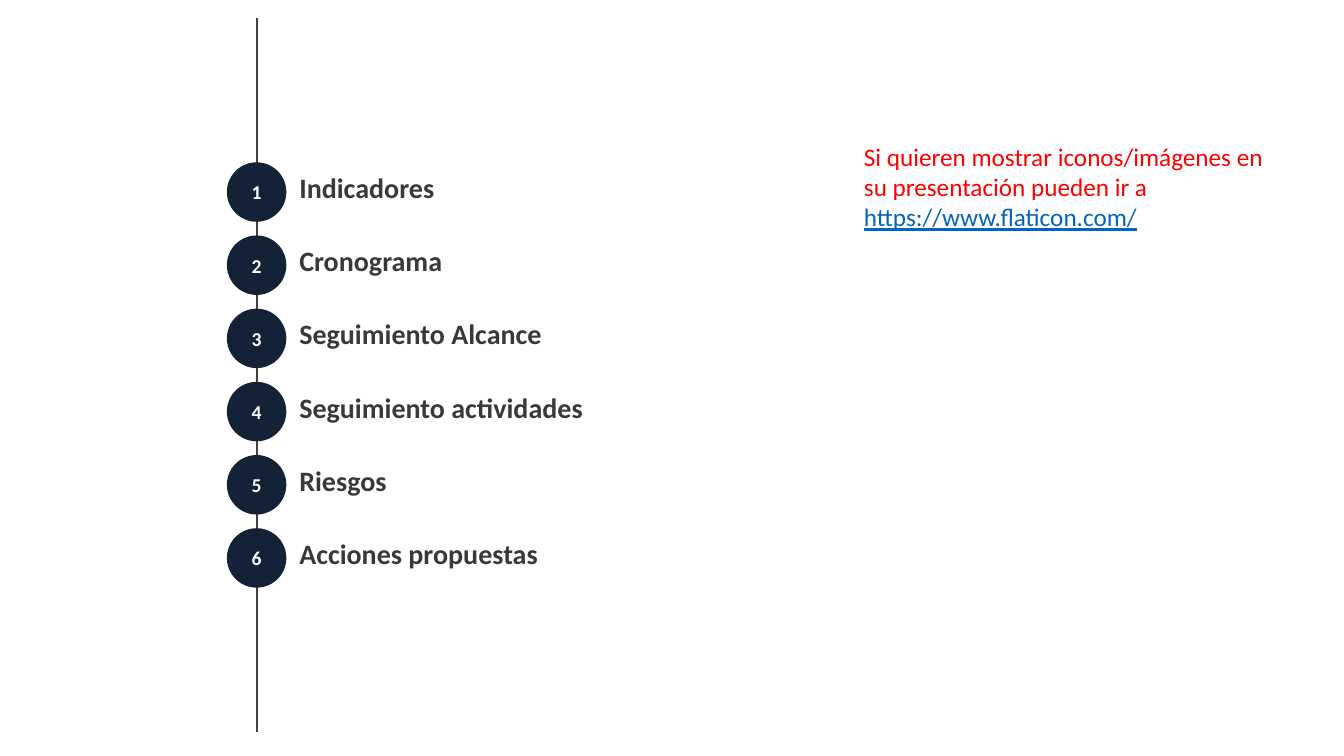
from pptx import Presentation
from pptx.dml.color import RGBColor
from pptx.enum.shapes import MSO_CONNECTOR, MSO_SHAPE
from pptx.enum.text import MSO_ANCHOR, PP_ALIGN
from pptx.oxml.ns import qn
from pptx.util import Inches, Pt
from lxml import etree

OVAL = MSO_SHAPE.OVAL
STRAIGHT = MSO_CONNECTOR.STRAIGHT
MIDDLE = MSO_ANCHOR.MIDDLE
CENTER = PP_ALIGN.CENTER

NAVY, GRAY, DARK, WHITE = "132236", "404040", "3B3838", "FFFFFF"
RED, BLUE = "FF0000", "0563C1"

TOPICS = ["Indicadores", "Cronograma", "Seguimiento Alcance",
          "Seguimiento actividades", "Riesgos", "Acciones propuestas"]
TOP, LAST = 1.61, 5.24
STEP = (LAST - TOP) / (len(TOPICS) - 1)
DISC = 0.59


def color(code):
    return RGBColor.from_string(code)


def style(run, size, code, bold=False):
    run.font.name = "Calibri"
    run.font.size = Pt(size)
    run.font.bold = bold
    run.font.color.rgb = color(code)


prs = Presentation()
prs.slide_width, prs.slide_height = Inches(13.33), Inches(7.5)
slide = prs.slides.add_slide(prs.slide_layouts[6])
shapes = slide.shapes

# Timeline
line = shapes.add_connector(STRAIGHT, Inches(2.55), Inches(0.18),
                            Inches(2.55), Inches(7.26))
line.line.color.rgb = color(GRAY)
line.line.width = Pt(1)
etree.SubElement(line._element.spPr, qn("a:effectLst"))

# Numbered topics
for i, topic in enumerate(TOPICS):
    y = TOP + i * STEP
    label = shapes.add_textbox(Inches(2.87), Inches(y + 0.07),
                               Inches(8.99), Inches(0.43))
    label.text_frame.word_wrap = True
    para = label.text_frame.paragraphs[0]
    para.text = topic
    para.line_spacing = 0.9
    style(para.runs[0], 20, DARK, True)

    disc = shapes.add_shape(OVAL, Inches(2.25), Inches(y),
                            Inches(DISC), Inches(DISC))
    disc.shadow.inherit = False
    disc.fill.solid()
    disc.fill.fore_color.rgb = color(NAVY)
    disc.line.fill.background()
    disc.text_frame.vertical_anchor = MIDDLE
    para = disc.text_frame.paragraphs[0]
    para.text = str(i + 1)
    para.alignment = CENTER
    style(para.runs[0], 14, WHITE, True)

# Note on icons
note = shapes.add_textbox(Inches(8.47), Inches(1.35), Inches(4.42), Inches(1.01))
note.text_frame.word_wrap = True
para = note.text_frame.paragraphs[0]
para.text = "Si quieren mostrar iconos/imágenes en su presentación pueden ir a "
style(para.runs[0], 18, RED)
link = para.add_run()
link.text = "https://www.flaticon.com/"
style(link, 18, BLUE)
link.font.underline = True

prs.save("out.pptx")
